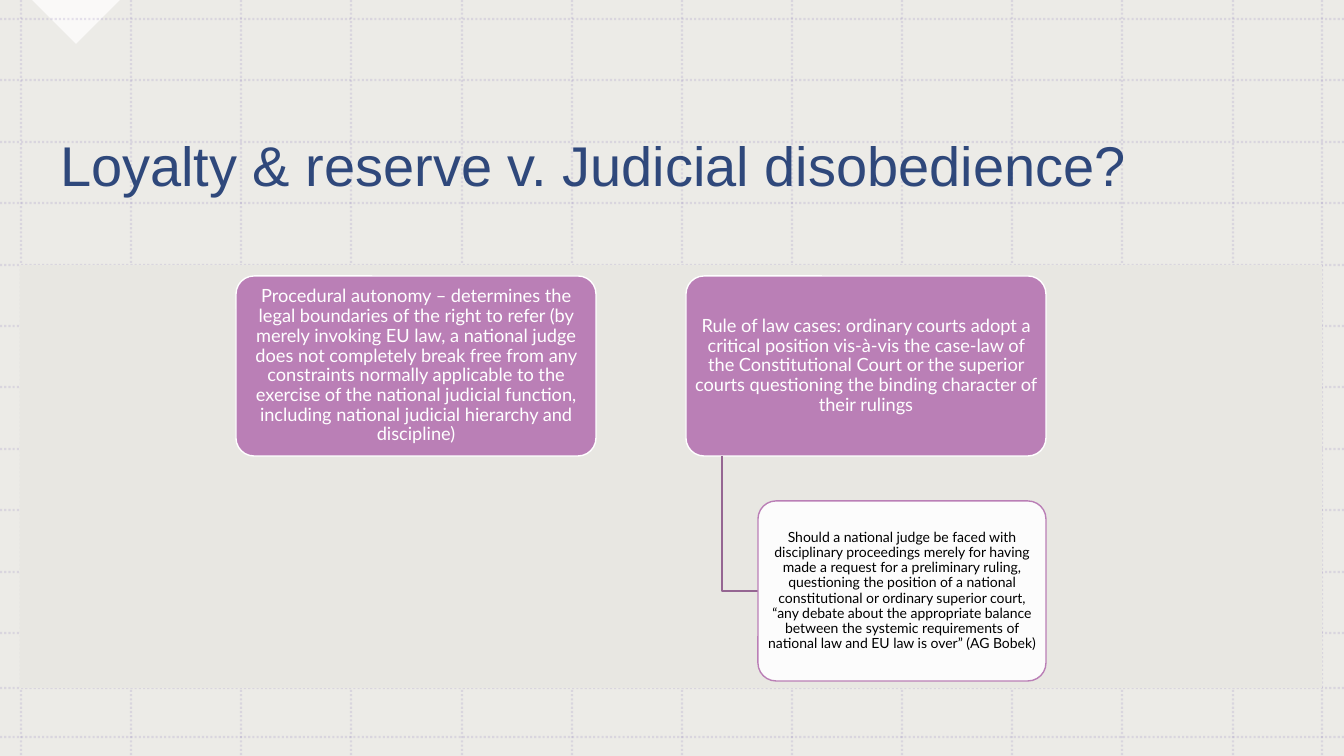
from dataclasses import dataclass

from lxml.etree import SubElement
from pptx import Presentation
from pptx.dml.color import RGBColor
from pptx.enum.dml import MSO_LINE
from pptx.enum.shapes import MSO_CONNECTOR, MSO_SHAPE
from pptx.enum.text import MSO_ANCHOR, PP_ALIGN
from pptx.oxml.ns import qn
from pptx.util import Emu, Pt

EMU_PER_PX = 12192000 / 1344
WIDTH, HEIGHT = 1344, 756


@dataclass(frozen=True)
class Theme:
    backdrop: str = "E8E7E2"
    white: str = "FFFFFF"
    grid: str = "8D7FBA"
    navy: str = "002060"
    purple: str = "BA7FB6"
    branch: str = "956692"
    black: str = "000000"
    title_font: str = "Arial"
    body_font: str = "Lato"
    title_size: int = 40
    topic_size: int = 13
    detail_size: int = 10


def px(length):
    return Emu(round(length * EMU_PER_PX))


def paint(color_format, color, opacity=100):
    """Set the colour of a solid fill, with an opacity in percent."""
    color_format.rgb = RGBColor.from_string(color)
    if opacity < 100:
        element = color_format._xFill.find(qn("a:srgbClr"))
        SubElement(element, qn("a:alpha"), val=str(opacity * 1000))


class SlideBuilder:
    def __init__(self, slide, theme):
        self.slide = slide
        self.theme = theme

    def shape(self, kind, box, fill, opacity=100, outline=None):
        shape = self.slide.shapes.add_shape(kind, *map(px, box))
        shape.shadow.inherit = False
        shape.fill.solid()
        paint(shape.fill.fore_color, fill, opacity)
        if outline:
            shape.line.color.rgb = RGBColor.from_string(outline)
            shape.line.width = Pt(1)
        else:
            shape.line.fill.background()
        return shape

    def grid_line(self, x1, y1, x2, y2):
        line = self.slide.shapes.add_connector(
            MSO_CONNECTOR.STRAIGHT, px(x1), px(y1), px(x2), px(y2))
        line.line.fill.solid()
        paint(line.line.fill.fore_color, self.theme.grid, 20)
        line.line.width = Pt(1.5)
        line.line.dash_style = MSO_LINE.ROUND_DOT
        SubElement(line._element.spPr, qn("a:effectLst"))

    def set_text(self, shape, text, font, size, color, opacity=100,
                 align=PP_ALIGN.LEFT, margins=(10, 5)):
        frame = shape.text_frame
        frame.word_wrap = True
        frame.vertical_anchor = MSO_ANCHOR.MIDDLE
        frame.margin_left = frame.margin_right = px(margins[0])
        frame.margin_top = frame.margin_bottom = px(margins[1])
        frame.text = text
        paragraph = frame.paragraphs[0]
        paragraph.alignment = align
        paragraph.line_spacing = 0.9
        run = paragraph.runs[0]
        run.font.name = font
        run.font.size = Pt(size)
        run.font.fill.solid()
        paint(run.font.fill.fore_color, color, opacity)

    def title(self, box, text):
        theme = self.theme
        shape = self.slide.shapes.add_textbox(*map(px, box))
        self.set_text(shape, text, theme.title_font, theme.title_size, theme.navy, 80)

    def card(self, box, text, fill, outline, size, color, margins, opacity=100):
        shape = self.shape(MSO_SHAPE.ROUNDED_RECTANGLE, box, fill, opacity, outline)
        shape.adjustments[0] = 0.1
        self.set_text(shape, text, self.theme.body_font, size, color,
                      align=PP_ALIGN.CENTER, margins=margins)

    def topic(self, box, text):
        theme = self.theme
        self.card(box, text, theme.purple, theme.white, theme.topic_size,
                  theme.white, (3, 2))

    def detail(self, box, text):
        theme = self.theme
        self.card(box, text, theme.white, theme.purple, theme.detail_size,
                  theme.black, (2, 1), 90)

    def branch(self, start, *points):
        builder = self.slide.shapes.build_freeform(*start, scale=EMU_PER_PX)
        builder.add_line_segments(points, close=False)
        shape = builder.convert_to_shape()
        shape.shadow.inherit = False
        shape.fill.background()
        shape.line.color.rgb = RGBColor.from_string(self.theme.branch)
        shape.line.width = Pt(1)


def main():
    presentation = Presentation()
    presentation.slide_width, presentation.slide_height = px(WIDTH), px(HEIGHT)
    slide = presentation.slides.add_slide(presentation.slide_layouts[6])
    theme = Theme()
    builder = SlideBuilder(slide, theme)

    full_slide = (0, 0, WIDTH, HEIGHT)
    builder.shape(MSO_SHAPE.RECTANGLE, full_slide, theme.white)
    builder.shape(MSO_SHAPE.RECTANGLE, full_slide, theme.backdrop, 80)
    corner = builder.shape(MSO_SHAPE.RIGHT_TRIANGLE, (45, -31, 62, 62), theme.white, 75)
    corner.rotation = 315

    columns = [round(21 + 110.15 * index) for index in range(12)] + [1322]
    rows = [round(19 + 61.4 * index) for index in range(11)] + [688, 737]
    for x in columns:
        builder.grid_line(x, 0, x, HEIGHT)
    for y in rows:
        builder.grid_line(0, y, WIDTH, y)

    builder.title((50, 80, 1184, 177), "Loyalty & reserve v. Judicial disobedience?")
    builder.shape(MSO_SHAPE.RECTANGLE, (20, 265, 1302, 423), theme.backdrop)

    topics = [
        "Procedural autonomy – determines the legal boundaries of the right to refer "
        "(by merely invoking EU law, a national judge does not completely break free "
        "from any constraints normally applicable to the exercise of the national "
        "judicial function, including national judicial hierarchy and discipline)",
        "Rule of law cases: ordinary courts adopt a critical position vis-à-vis the "
        "case-law of the Constitutional Court or the superior courts questioning the "
        "binding character of their rulings",
    ]
    for index, text in enumerate(topics):
        builder.topic((236 + 450 * index, 276, 360, 180), text)

    builder.branch((722, 456), (722, 591), (758, 591))
    builder.detail(
        (758, 501, 288, 180),
        "Should a national judge be faced with disciplinary proceedings merely for "
        "having made a request for a preliminary ruling, questioning the position of "
        "a national constitutional or ordinary superior court, “any debate about the "
        "appropriate balance between the systemic requirements of national law and "
        "EU law is over” (AG Bobek)")

    presentation.save("out.pptx")


if __name__ == "__main__":
    main()
